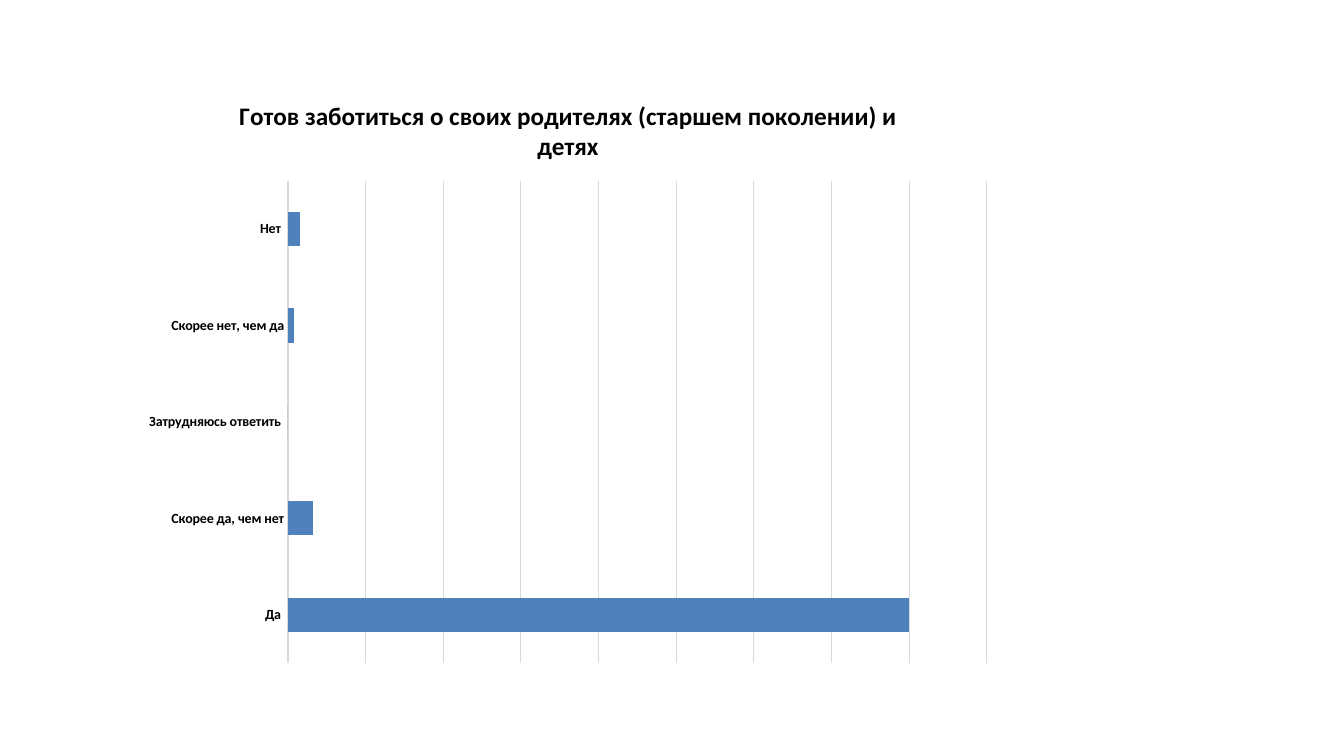
from lxml import etree
from pptx import Presentation
from pptx import util as u
from pptx.chart.data import CategoryChartData
from pptx.dml.color import RGBColor
from pptx.enum import chart as ch
from pptx.oxml import ns

PX = 914400 / 100.8
BLACK = RGBColor(0x00, 0x00, 0x00)
GREY = RGBColor(0xD9, 0xD9, 0xD9)
BLUE = RGBColor(0x4F, 0x81, 0xBD)

ANSWERS = {
    "Да ": 100,
    "Скорее да, чем нет": 4,
    "Затрудняюсь ответить ": 0,
    "Скорее нет, чем да": 1,
    "Нет ": 2,
}


def style_font(font, size, bold):
    font.name = "Calibri"
    font.size = u.Pt(size)
    font.bold = bold
    font.color.rgb = BLACK


prs = Presentation()
prs.slide_width, prs.slide_height = round(1344 * PX), round(756 * PX)
s = prs.slides.add_slide(prs.slide_layouts[6])

data = CategoryChartData()
data.categories = list(ANSWERS)
data.add_series("Series 1", list(ANSWERS.values()))
box = [round(v * PX) for v in (132, 76, 872, 600)]
chart = s.shapes.add_chart(ch.XL_CHART_TYPE.BAR_CLUSTERED, *box, data).chart
style_font(chart.font, 10, False)
chart.has_legend = False

# Title
chart.has_title = True
tf = chart.chart_title.text_frame
tf.text = "Готов заботиться о своих родителях (старшем поколении) и детях"
style_font(tf.paragraphs[0].runs[0].font, 18, True)
chart.chart_title.include_in_layout = False

# Bars
plot = chart.plots[0]
plot.gap_width = 182
plot.vary_by_categories = False
fill = plot.series[0].format.fill
fill.solid()
fill.fore_color.rgb = BLUE

# Axes
answer_axis = chart.category_axis
answer_axis.major_tick_mark = ch.XL_TICK_MARK.NONE
style_font(answer_axis.tick_labels.font, 10, True)
value_axis = chart.value_axis
value_axis.visible = False
value_axis.minimum_scale = 0
value_axis.maximum_scale = 112.5
value_axis.major_unit = 12.5
value_axis.has_major_gridlines = True
for line in (answer_axis.format.line, value_axis.major_gridlines.format.line):
    line.color.rgb = GREY
    line.width = u.Pt(0.75)

# Plot area position, as fractions of the chart
plot_area = chart._chartSpace.chart.plotArea
for old in plot_area.findall(ns.qn("c:layout")):
    plot_area.remove(old)
layout = etree.Element(ns.qn("c:layout"))
manual = etree.SubElement(layout, ns.qn("c:manualLayout"))
for tag, val in (("layoutTarget", "inner"), ("xMode", "edge"), ("yMode", "edge"),
                 ("x", 156 / 872), ("y", 105 / 600),
                 ("w", 699 / 872), ("h", 482 / 600)):
    etree.SubElement(manual, ns.qn(f"c:{tag}")).set("val", str(val))
plot_area.insert(0, layout)

prs.save("out.pptx")
